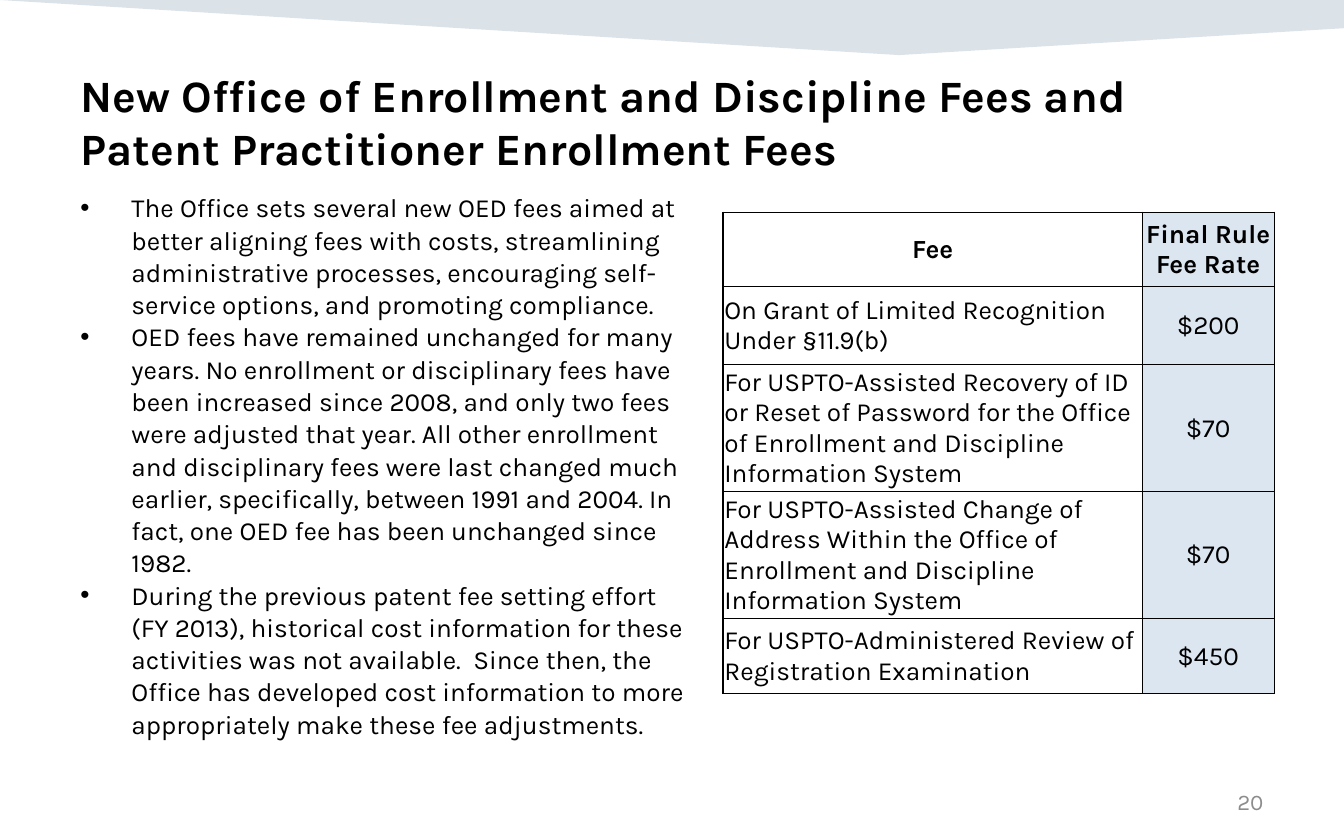
"""Build the slide on enrollment and discipline fees."""
from typing import NamedTuple

from pptx import Presentation
from pptx.dml.color import RGBColor
from pptx.enum import text
from pptx.oxml import xmlchemy
from pptx.oxml.ns import qn
from pptx.util import Emu, Inches, Pt

FONT = "Karla"
BLACK, GRAY, NAVY, PALE_BLUE = "000000", "8C8C8C", "164469", "DCE6F1"
LEFT, CENTER, RIGHT = text.PP_ALIGN.LEFT, text.PP_ALIGN.CENTER, text.PP_ALIGN.RIGHT


class Box(NamedTuple):
    left: float
    top: float
    width: float
    height: float

    def lengths(self) -> list[Emu]:
        return [Inches(value) for value in self]


class FeeRow(NamedTuple):
    fee: str
    rate: str
    height: float


TITLE = "New Office of Enrollment and Discipline Fees and Patent Practitioner Enrollment Fees"
BULLETS = [
    "The Office sets several new OED fees aimed at better aligning fees with costs, "
    "streamlining administrative processes, encouraging self-service options, and "
    "promoting compliance.",
    "OED fees have remained unchanged for many years. No enrollment or disciplinary fees "
    "have been increased since 2008, and only two fees were adjusted that year. All other "
    "enrollment and disciplinary fees were last changed much earlier, specifically, between "
    "1991 and 2004. In fact, one OED fee has been unchanged since 1982.",
    "During the previous patent fee setting effort (FY 2013), historical cost information "
    "for these activities was not available.  Since then, the Office has developed cost "
    "information to more appropriately make these fee adjustments.",
]
FEE_ROWS = [
    FeeRow("Fee", "Final Rule Fee Rate", 0.55),
    FeeRow("On Grant of Limited Recognition Under §11.9(b)", "$200", 0.58),
    FeeRow("For USPTO-Assisted Recovery of ID or Reset of Password for the Office of "
           "Enrollment and Discipline Information System", "$70", 0.92),
    FeeRow("For USPTO-Assisted Change of Address Within the Office of Enrollment and "
           "Discipline Information System", "$70", 0.92),
    FeeRow("For USPTO-Administered Review of Registration Examination", "$450", 0.56),
]
COLUMN_WIDTHS = [3.12, 0.98]


def color(value: str) -> RGBColor:
    return RGBColor.from_string(value)


def add_element(parent, tag: str, **attributes):
    element = xmlchemy.OxmlElement(tag)
    for name, value in attributes.items():
        element.set(name, str(value))
    parent.append(element)
    return element


def format_paragraph(paragraph, size: float, hex_color: str = BLACK,
                     bold: bool = False, align=LEFT) -> None:
    paragraph.alignment = align
    for run in paragraph.runs:
        run.font.name, run.font.size, run.font.bold = FONT, Pt(size), bold
        run.font.color.rgb = color(hex_color)


def add_banner(slide) -> None:
    points = [(Inches(x), Inches(y)) for x, y in [(10, 0), (10, 0.21), (6.69, 0.41)]]
    builder = slide.shapes.build_freeform(0, 0)
    builder.add_line_segments(points, close=True)
    banner = builder.convert_to_shape()
    banner.shadow.inherit = False
    banner.line.fill.background()
    banner.fill.solid()
    banner.fill.fore_color.rgb = color(NAVY)
    fill_color = banner.fill._xPr.find(qn("a:solidFill"))[0]
    add_element(fill_color, "a:alpha", val=15000)


def set_title(slide, box: Box) -> None:
    title = slide.shapes.title
    title.left, title.top, title.width, title.height = box.lengths()
    frame = title.text_frame
    frame.text = TITLE
    frame.word_wrap = True
    frame.auto_size = text.MSO_AUTO_SIZE.NONE
    frame.vertical_anchor = text.MSO_ANCHOR.TOP
    frame.margin_top = Inches(0.09)
    format_paragraph(frame.paragraphs[0], 24, bold=True)


def add_text_box(slide, box: Box, content: str):
    frame = slide.shapes.add_textbox(*box.lengths()).text_frame
    frame.word_wrap = True
    frame.text = content
    return frame


def add_bullets(slide, box: Box) -> None:
    frame = add_text_box(slide, box, "\n".join(BULLETS))
    frame.margin_right = Inches(0.08)
    indent = Inches(0.38)
    for paragraph in frame.paragraphs:
        format_paragraph(paragraph, 14)
        paragraph.line_spacing = 1.03
        properties = paragraph._p.get_or_add_pPr()
        properties.set("marL", str(indent))
        properties.set("indent", str(-indent))
        add_element(properties, "a:buFont", typeface="Arial")
        add_element(properties, "a:buChar", char="•")


def set_borders(cell, widths: dict[str, float]) -> None:
    properties = cell._tc.get_or_add_tcPr()
    for position, (side, width) in enumerate(widths.items()):
        line = xmlchemy.OxmlElement(f"a:ln{side}")
        line.set("w", str(Pt(width)))
        add_element(add_element(line, "a:solidFill"), "a:srgbClr", val=BLACK)
        properties.insert(position, line)


def add_fee_table(slide, box: Box) -> None:
    frame = slide.shapes.add_table(len(FEE_ROWS), len(COLUMN_WIDTHS), *box.lengths())
    table = frame.table
    table.first_row = table.horz_banding = False
    for column, width in zip(table.columns, COLUMN_WIDTHS):
        column.width = Inches(width)
    for row_index, fee_row in enumerate(FEE_ROWS):
        table.rows[row_index].height = Inches(fee_row.height)
        header = row_index == 0
        for column_index, content in enumerate([fee_row.fee, fee_row.rate]):
            cell = table.cell(row_index, column_index)
            is_rate = column_index == 1
            cell.text_frame.text = content
            cell.vertical_anchor = text.MSO_ANCHOR.MIDDLE
            cell.margin_left = cell.margin_top = cell.margin_right = Inches(0.01)
            cell.margin_bottom = 0
            format_paragraph(cell.text_frame.paragraphs[0], 14, bold=header,
                             align=CENTER if header or is_rate else LEFT)
            if is_rate:
                cell.fill.solid()
                cell.fill.fore_color.rgb = color(PALE_BLUE)
            else:
                cell.fill.background()
            set_borders(cell, {"L": 0.5 if is_rate else 1, "R": 0.5,
                               "T": 1 if header else 0.5, "B": 0.5})


def add_slide_number(slide, box: Box) -> None:
    frame = add_text_box(slide, box, "20")
    frame.vertical_anchor = text.MSO_ANCHOR.MIDDLE
    format_paragraph(frame.paragraphs[0], 12, GRAY, align=RIGHT)


def main() -> None:
    presentation = Presentation()
    presentation.slide_width, presentation.slide_height = Inches(10), Inches(6.25)
    slide = presentation.slides.add_slide(presentation.slide_layouts[5])
    add_banner(slide)
    set_title(slide, Box(0.5, 0.41, 9, 0.51))
    add_slide_number(slide, Box(7.17, 5.8, 2.33, 0.33))
    add_bullets(slide, Box(0.5, 1.37, 4.69, 4.88))
    add_fee_table(slide, Box(5.38, 1.58, sum(COLUMN_WIDTHS), sum(row.height for row in FEE_ROWS)))
    presentation.save("out.pptx")


if __name__ == "__main__":
    main()
